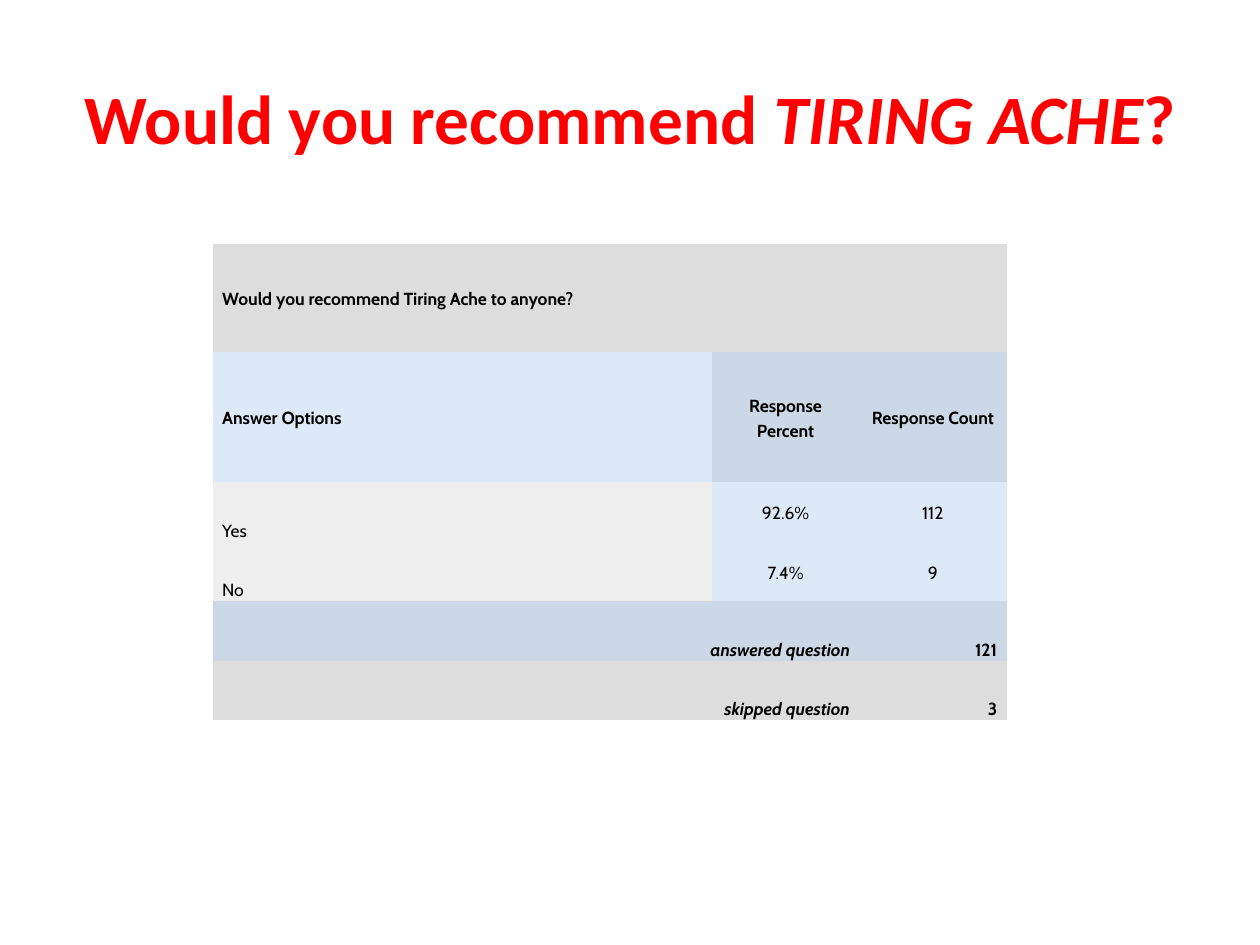
from pptx import Presentation
from pptx.dml.color import RGBColor
from pptx.enum.text import MSO_ANCHOR as Anchor, MSO_AUTO_SIZE as AutoSize, PP_ALIGN as Align
from pptx.util import Cm, Pt

RED = RGBColor(0xFF, 0x00, 0x00)
BLACK = RGBColor(0x00, 0x00, 0x00)
GREY = RGBColor(0xDD, 0xDD, 0xDD)
PALE_GREY = RGBColor(0xEE, 0xEE, 0xEE)
BLUE = RGBColor(0xCD, 0xD8, 0xE6)
PALE_BLUE = RGBColor(0xDE, 0xE9, 0xF7)

PLAIN_TABLE_STYLE = "{2D5ABB26-0587-4C30-8999-92F81FD0307C}"


class SurveySlide:
    title_font = "Calibri"
    table_font = "Cabin"

    def __init__(self, deck):
        self.page = deck.slides.add_slide(deck.slide_layouts[5])

    def title(self, spans, left, top, width, height):
        """Fill the title from (text, italic) spans."""
        box = self.page.shapes.title
        box.left, box.top, box.width, box.height = map(Cm, (left, top, width, height))
        frame = box.text_frame
        frame.auto_size = AutoSize.NONE
        frame.vertical_anchor = Anchor.MIDDLE
        para = frame.paragraphs[0]
        para.alignment = Align.CENTER
        font = para.font
        font.name, font.size, font.bold = self.title_font, Pt(39.6), True
        font.color.rgb = RED
        for text, italic in spans:
            span = para.add_run()
            span.text = text
            span.font.italic = italic

    def table(self, left, top, columns, rows):
        """Add an unbanded, borderless table with the given sizes."""
        frame = self.page.shapes.add_table(
            len(rows), len(columns), Cm(left), Cm(top), Cm(sum(columns)), Cm(sum(rows)))
        table = frame.table
        table.first_row = table.horz_banding = False
        table._tbl.tblPr.find("{*}tableStyleId").text = PLAIN_TABLE_STYLE
        for column, width in zip(table.columns, columns):
            column.width = Cm(width)
        for row, height in zip(table.rows, rows):
            row.height = Cm(height)
        return table

    def cell(self, cell, text, fill, align=Align.LEFT, anchor=Anchor.MIDDLE,
             bold=False, italic=False):
        cell.fill.solid()
        cell.fill.fore_color.rgb = fill
        cell.margin_left = cell.margin_right = Cm(0.19)
        cell.margin_top = cell.margin_bottom = 0
        cell.vertical_anchor = anchor
        para = cell.text_frame.paragraphs[0]
        para.text = text
        para.alignment = align
        para.line_spacing = 1.15
        font = para.font
        font.name, font.size, font.bold, font.italic = self.table_font, Pt(10), bold, italic
        font.color.rgb = BLACK


def main():
    deck = Presentation()
    deck.slide_width, deck.slide_height = Cm(25.4), Cm(19.05)
    slide = SurveySlide(deck)

    slide.title([("Would you recommend ", False), ("TIRING ACHE", True), ("?", False)],
                1.27, 0.76, 22.86, 3.18)

    table = slide.table(4.29, 4.92, [10.06, 2.97, 2.97], [2.18, 2.62] + [1.2] * 4)

    # Question and column headings
    table.cell(0, 0).merge(table.cell(0, 2))
    slide.cell(table.cell(0, 0), "Would you recommend Tiring Ache to anyone?", GREY, bold=True)
    slide.cell(table.cell(1, 0), "Answer Options", PALE_BLUE, bold=True)
    for column, heading in enumerate(["Response Percent", "Response Count"], 1):
        slide.cell(table.cell(1, column), heading, BLUE, Align.CENTER, bold=True)

    # Answers
    answers = [("Yes", "92.6%", "112"), ("No", "7.4%", "9")]
    for row, (option, *values) in enumerate(answers, 2):
        slide.cell(table.cell(row, 0), option, PALE_GREY, anchor=Anchor.BOTTOM)
        for column, value in enumerate(values, 1):
            slide.cell(table.cell(row, column), value, PALE_BLUE, Align.CENTER)

    # Totals
    totals = [("answered question", "121", BLUE), ("skipped question", "3", GREY)]
    for row, (label, count, fill) in enumerate(totals, 4):
        table.cell(row, 0).merge(table.cell(row, 1))
        slide.cell(table.cell(row, 0), label, fill, Align.RIGHT, Anchor.BOTTOM, True, True)
        slide.cell(table.cell(row, 2), count, fill, Align.RIGHT, Anchor.BOTTOM, True)

    deck.save("out.pptx")


if __name__ == "__main__":
    main()
